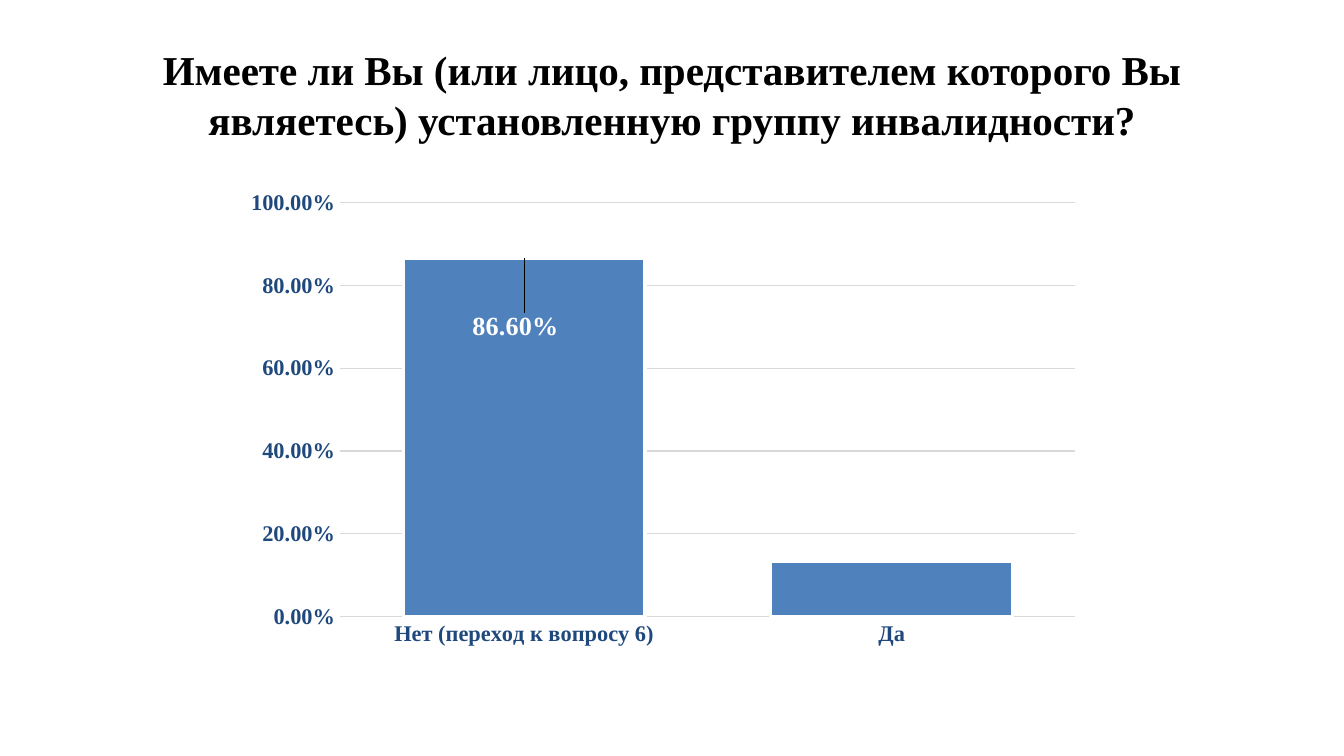
from dataclasses import dataclass

import pptx
import pptx.chart.data
import pptx.dml.color
import pptx.enum.chart
import pptx.enum.text
import pptx.oxml
import pptx.oxml.ns
import pptx.util

BLACK = pptx.dml.color.RGBColor(0x00, 0x00, 0x00)
WHITE = pptx.dml.color.RGBColor(0xFF, 0xFF, 0xFF)
NAVY = pptx.dml.color.RGBColor(0x1F, 0x49, 0x7D)
BLUE = pptx.dml.color.RGBColor(0x4F, 0x81, 0xBD)
GRID_GREY = pptx.dml.color.RGBColor(0xD9, 0xD9, 0xD9)
SERIF = "Times New Roman"
PERCENT = "0.00%"
WIDTH = pptx.util.Inches(10)
HEIGHT = WIDTH * 9 // 16
CHART_2012 = "http://schemas.microsoft.com/office/drawing/2012/chart"
QUESTION = (
    "Имеете ли Вы (или лицо, представителем которого Вы являетесь) "
    "установленную группу инвалидности?"
)


@dataclass(frozen=True)
class Area:
    left: float
    top: float
    width: float
    height: float

    def on_slide(self) -> tuple[int, int, int, int]:
        return (
            int(self.left * WIDTH),
            int(self.top * HEIGHT),
            int(self.width * WIDTH),
            int(self.height * HEIGHT),
        )


@dataclass(frozen=True)
class Answer:
    wording: str
    share: float


QUESTION_AREA = Area(0.05, 0.041, 0.9, 0.167)
CHART_AREA = Area(0.177, 0.249, 0.636, 0.644)
ANSWERS = [Answer("Нет (переход к вопросу 6)", 0.866), Answer("Да", 0.134)]


def style_font(font, size: float, color) -> None:
    font.name = SERIF
    font.size = pptx.util.Pt(size)
    font.bold = True
    font.color.rgb = color


def manual_layout(**settings):
    entries = "".join(f'<c:{key} val="{value}"/>' for key, value in settings.items())
    return pptx.oxml.parse_xml(
        f'<c:layout {pptx.oxml.ns.nsdecls("c")}>'
        f"<c:manualLayout>{entries}</c:manualLayout></c:layout>"
    )


def hidden_leader_lines():
    return pptx.oxml.parse_xml(
        f'<c:extLst {pptx.oxml.ns.nsdecls("c")}>'
        f'<c:ext uri="{{CE6537A1-D6FC-4f65-9D91-7224C49458BB}}" xmlns:c15="{CHART_2012}">'
        '<c15:showLeaderLines val="0"/></c:ext></c:extLst>'
    )


def add_question(slide) -> None:
    frame = slide.shapes.add_textbox(*QUESTION_AREA.on_slide()).text_frame
    frame.word_wrap = True
    frame.vertical_anchor = pptx.enum.text.MSO_ANCHOR.MIDDLE
    paragraph = frame.paragraphs[0]
    paragraph.alignment = pptx.enum.text.PP_ALIGN.CENTER
    run = paragraph.add_run()
    run.text = QUESTION
    style_font(run.font, 22, BLACK)


def style_axis(axis) -> None:
    axis.major_tick_mark = pptx.enum.chart.XL_TICK_MARK.NONE
    axis.minor_tick_mark = pptx.enum.chart.XL_TICK_MARK.NONE
    axis.format.line.fill.background()
    style_font(axis.tick_labels.font, 12, NAVY)


def style_scale(axis) -> None:
    axis.minimum_scale, axis.maximum_scale, axis.major_unit = 0, 1, 0.2
    axis.tick_labels.number_format = PERCENT
    axis.tick_labels.number_format_is_linked = False
    axis.has_major_gridlines = True
    gridline = axis.major_gridlines.format.line
    gridline.color.rgb = GRID_GREY
    gridline.width = pptx.util.Pt(0.75)


def style_bars(series) -> None:
    series.format.fill.solid()
    series.format.fill.fore_color.rgb = BLUE
    series.format.line.color.rgb = WHITE
    series.format.line.width = pptx.util.Pt(1.75)
    labels = series.data_labels
    labels.show_value = False
    labels.number_format = PERCENT
    labels.number_format_is_linked = False
    leading_label = series.points[0].data_label
    style_font(leading_label.font, 14, WHITE)
    leading_label.position = pptx.enum.chart.XL_LABEL_POSITION.INSIDE_END
    all_labels = series._element.xpath("c:dLbls")[0]
    all_labels.xpath("c:dLbl")[0].insert(1, manual_layout(x=-0.01, y=0.1))
    all_labels.append(hidden_leader_lines())


def add_answer_chart(slide) -> None:
    data = pptx.chart.data.CategoryChartData(number_format=PERCENT)
    data.categories = [answer.wording for answer in ANSWERS]
    data.add_series("Series 1", [answer.share for answer in ANSWERS])
    chart = slide.shapes.add_chart(
        pptx.enum.chart.XL_CHART_TYPE.COLUMN_CLUSTERED, *CHART_AREA.on_slide(), data
    ).chart
    chart.has_legend = False
    chart.has_title = False
    chart.font.name = "Calibri"
    chart.font.size = pptx.util.Pt(10)
    chart.font.color.rgb = BLACK
    style_axis(chart.category_axis)
    style_axis(chart.value_axis)
    style_scale(chart.value_axis)
    bars = chart.plots[0]
    bars.gap_width = 52
    bars.vary_by_categories = False
    style_bars(bars.series[0])
    plot_area = chart._chartSpace.xpath("c:chart/c:plotArea")[0]
    for automatic in plot_area.xpath("c:layout"):
        plot_area.remove(automatic)
    placement = manual_layout(
        layoutTarget="inner", xMode="edge", yMode="edge", x=0.12, y=0.03, w=0.86, h=0.85
    )
    plot_area.insert(0, placement)


def main() -> None:
    presentation = pptx.Presentation()
    presentation.slide_width, presentation.slide_height = WIDTH, HEIGHT
    slide = presentation.slides.add_slide(presentation.slide_layouts[6])
    add_question(slide)
    add_answer_chart(slide)
    presentation.save("out.pptx")


if __name__ == "__main__":
    main()
